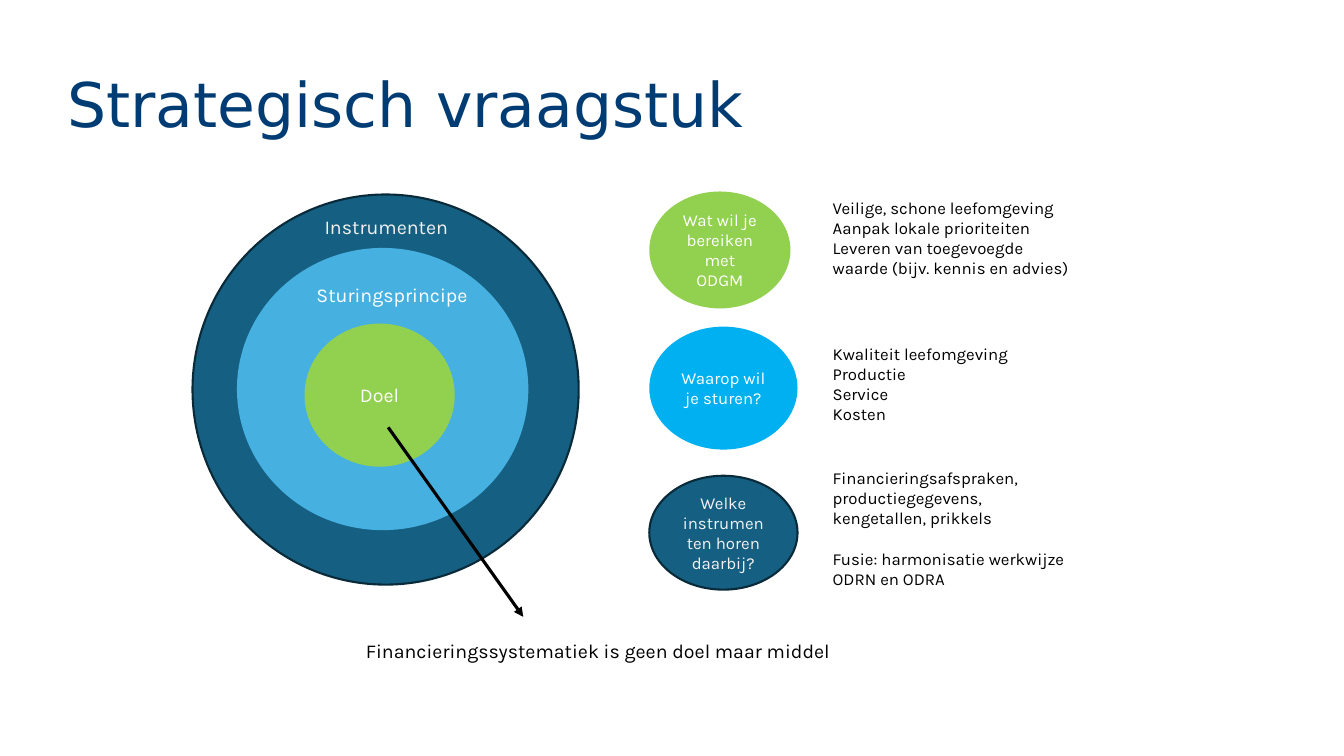
"""Build the slide about the strategic question: goal, steering principle and instruments."""
from dataclasses import dataclass
from typing import Optional

import lxml.etree
import pptx
import pptx.dml.color
import pptx.enum.shapes
import pptx.enum.text
import pptx.oxml.ns
import pptx.slide
import pptx.text.text
import pptx.util

RGBColor = pptx.dml.color.RGBColor
NAVY = RGBColor(0x00, 0x3C, 0x74)
TEAL = RGBColor(0x15, 0x60, 0x82)
DARK_TEAL = RGBColor(0x09, 0x2A, 0x39)
LIGHT_BLUE = RGBColor(0x46, 0xB1, 0xE1)
BRIGHT_BLUE = RGBColor(0x00, 0xB0, 0xF0)
GREEN = RGBColor(0x92, 0xD0, 0x50)
BLACK = RGBColor(0x00, 0x00, 0x00)
WHITE = RGBColor(0xFF, 0xFF, 0xFF)
OFF_WHITE = RGBColor(0xF2, 0xF2, 0xF2)

PX_PER_INCH = 100
EMU_PER_PX = pptx.util.Inches(1) // PX_PER_INCH
ANCHOR = pptx.enum.text.MSO_ANCHOR
AUTO_SIZE = pptx.enum.text.MSO_AUTO_SIZE
CENTER = pptx.enum.text.PP_ALIGN.CENTER
NOTES_LEFT = 816
STEPS_LEFT = 644


@dataclass(frozen=True)
class Area:
    """Position and size in px."""

    left: int
    top: int
    width: int
    height: int

    def emu(self) -> tuple[int, ...]:
        """Return the four lengths in EMU."""
        return tuple(px(length) for length in (self.left, self.top, self.width, self.height))


@dataclass(frozen=True)
class Line:
    """One paragraph with the space before it in points."""

    text: str
    space_before: float = 0


@dataclass(frozen=True)
class Label:
    """A free text box."""

    area: Area
    lines: tuple[Line, ...]
    size: int = 14
    color: RGBColor = BLACK
    font: str = "Karla"


@dataclass(frozen=True)
class Circle:
    """A filled circle with optional outline and text."""

    area: Area
    fill: RGBColor
    text: str = ""
    size: int = 12
    color: RGBColor = WHITE
    outline: Optional[RGBColor] = None


TITLE = Label(Area(57, 34, 1150, 145), (Line("Strategisch vraagstuk"),), 44, NAVY, "DejaVu Sans")

CIRCLES = (
    Circle(Area(191, 193, 383, 387), TEAL, outline=DARK_TEAL),
    Circle(Area(235, 246, 289, 280), LIGHT_BLUE),
    Circle(Area(302, 321, 149, 142), GREEN, "Doel", 14),
    Circle(Area(STEPS_LEFT, 190, 140, 116), GREEN, "Wat wil je bereiken met ODGM"),
    Circle(Area(STEPS_LEFT, 324, 147, 122), BRIGHT_BLUE, "Waarop wil je sturen?"),
    Circle(Area(STEPS_LEFT, 472, 147, 113), TEAL, "Welke instrumenten horen daarbij?",
           color=OFF_WHITE, outline=DARK_TEAL),
)

LABELS = (
    Label(Area(304, 276, 180, 34), (Line("Sturingsprincipe"),), color=WHITE),
    Label(Area(312, 208, 149, 34), (Line("Instrumenten"),), color=OFF_WHITE),
    Label(Area(353, 629, 521, 34), (Line("Financieringssystematiek is geen doel maar middel"),)),
    Label(Area(NOTES_LEFT, 191, 259, 91), (
        Line("Veilige, schone leefomgeving"),
        Line("Aanpak lokale prioriteiten"),
        Line("Leveren van toegevoegde waarde (bijv. kennis en advies)"),
    ), 12),
    Label(Area(NOTES_LEFT, 336, 258, 121), (
        Line("Kwaliteit leefomgeving"),
        Line("Productie"),
        Line("Service"),
        Line("Kosten"),
    ), 12),
    Label(Area(NOTES_LEFT, 459, 274, 131), (
        Line("Financieringsafspraken, productiegegevens,"),
        Line("kengetallen, prikkels"),
        Line("Fusie: harmonisatie werkwijze ODRN en ODRA", 14.4),
    ), 12),
)


def px(length: int) -> int:
    """Turn px into EMU."""
    return length * EMU_PER_PX


def apply_format(target: object, values: dict[str, object]) -> None:
    """Set every attribute named in the format values."""
    for name, value in values.items():
        setattr(target, name, value)


def write_line(para: pptx.text.text._Paragraph, line: Line, size: int, color: RGBColor,
               font: str = "Karla") -> None:
    """Write one formatted paragraph."""
    span = para.add_run()
    span.text = line.text
    apply_format(span.font, {"name": font, "size": pptx.util.Pt(size)})
    span.font.color.rgb = color
    if line.space_before:
        para.space_before = pptx.util.Pt(line.space_before)


def draw_circle(page: pptx.slide.Slide, circle: Circle) -> None:
    """Draw a circle with its text."""
    shape = page.shapes.add_shape(
        pptx.enum.shapes.MSO_SHAPE.FLOWCHART_CONNECTOR, *circle.area.emu())
    shape.shadow.inherit = False
    shape.fill.solid()
    shape.fill.fore_color.rgb = circle.fill
    if circle.outline is None:
        shape.line.fill.background()
    else:
        shape.line.color.rgb = circle.outline
        shape.line.width = pptx.util.Pt(1.5)
    if circle.text:
        apply_format(shape.text_frame, {"word_wrap": True, "vertical_anchor": ANCHOR.MIDDLE})
        para = shape.text_frame.paragraphs[0]
        para.alignment = CENTER
        write_line(para, Line(circle.text), circle.size, circle.color)


def draw_label(page: pptx.slide.Slide, label: Label) -> pptx.text.text.TextFrame:
    """Draw a text box and return its text frame."""
    frame = page.shapes.add_textbox(*label.area.emu()).text_frame
    apply_format(frame, {"word_wrap": True, "auto_size": AUTO_SIZE.SHAPE_TO_FIT_TEXT})
    for index, line in enumerate(label.lines):
        para = frame.add_paragraph() if index else frame.paragraphs[0]
        write_line(para, line, label.size, label.color, label.font)
    return frame


def draw_title(page: pptx.slide.Slide) -> None:
    """Draw the title, centred vertically in its box."""
    frame = draw_label(page, TITLE)
    apply_format(frame, {"auto_size": AUTO_SIZE.NONE, "vertical_anchor": ANCHOR.MIDDLE})
    frame.paragraphs[0].line_spacing = 0.9


def draw_arrow(page: pptx.slide.Slide, start: tuple[int, int], end: tuple[int, int]) -> None:
    """Draw a black arrow between two points in px."""
    arrow = page.shapes.add_connector(
        pptx.enum.shapes.MSO_CONNECTOR.STRAIGHT, *map(px, start + end))
    arrow.line.color.rgb = BLACK
    arrow.line.width = pptx.util.Pt(2.25)
    qn = pptx.oxml.ns.qn
    properties = arrow._element.spPr
    lxml.etree.SubElement(properties.find(qn("a:ln")), qn("a:tailEnd"), type="triangle")
    lxml.etree.SubElement(properties, qn("a:effectLst"))


def main() -> None:
    """Build and save the deck."""
    deck = pptx.Presentation()
    apply_format(deck, {"slide_width": px(1333), "slide_height": px(750)})
    page = deck.slides.add_slide(deck.slide_layouts[6])
    draw_title(page)
    for circle in CIRCLES:
        draw_circle(page, circle)
    for label in LABELS:
        draw_label(page, label)
    draw_arrow(page, (385, 424), (519, 612))
    deck.save("out.pptx")


if __name__ == "__main__":
    main()
